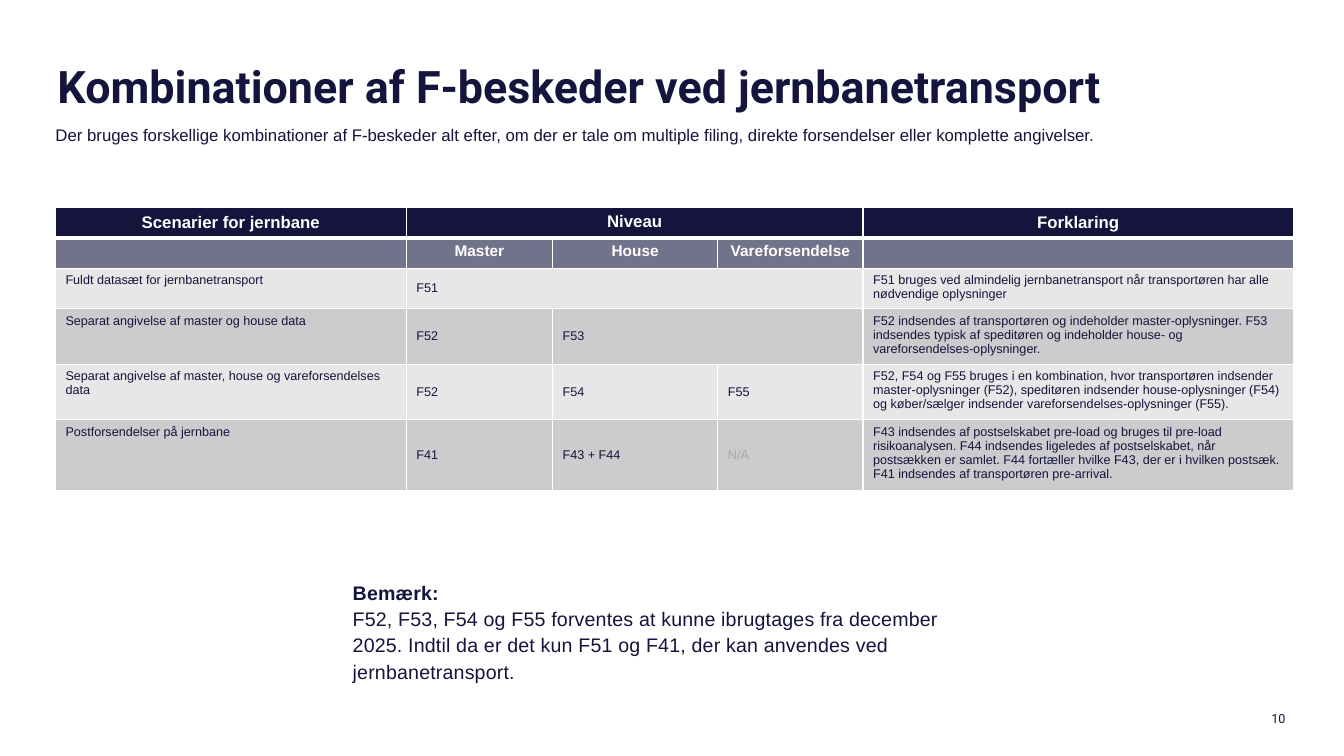
from pptx import Presentation
from pptx.util import Inches, Pt
from pptx.dml.color import RGBColor
from pptx.enum.text import PP_ALIGN, MSO_ANCHOR
from pptx.oxml import parse_xml
from pptx.oxml.ns import nsdecls
from lxml.etree import SubElement

NAVY = RGBColor(0x14, 0x14, 0x3C)
SLATE = RGBColor(0x72, 0x72, 0x8A)
LIGHT = RGBColor(0xE7, 0xE7, 0xE8)
GREY = RGBColor(0xCC, 0xCC, 0xCE)
MUTED = RGBColor(0xA6, 0xA6, 0xA6)
WHITE = RGBColor(0xFF, 0xFF, 0xFF)


def style(p, size, color=NAVY, bold=False, name="Arial", align=PP_ALIGN.LEFT):
    p.alignment = align
    p.font.size = Pt(size)
    p.font.bold = bold
    p.font.name = name
    p.font.color.rgb = color


def add_text(s, text, left, top, width, height, inset=0):
    tf = s.shapes.add_textbox(Inches(left), Inches(top), Inches(width), Inches(height)).text_frame
    tf.word_wrap = True
    tf.margin_left = tf.margin_right = Inches(inset)
    tf.margin_top = tf.margin_bottom = Inches(inset / 2)
    tf.text = text
    return tf


prs = Presentation()
prs.slide_width, prs.slide_height = Inches(13.33), Inches(7.5)
s = prs.slides.add_slide(prs.slide_layouts[6])

# Title and introduction
tf = add_text(s, "Kombinationer af F-beskeder ved jernbanetransport", 0.57, 0.65, 12.2, 0.57)
style(tf.paragraphs[0], 32, bold=True, name="Roboto")
tf.paragraphs[0].line_spacing = 0.89
tf = add_text(s, "Der bruges forskellige kombinationer af F-beskeder alt efter, om der er tale om "
              "multiple filing, direkte forsendelser eller komplette angivelser.", 0.55, 1.22, 11.05, 0.43)
style(tf.paragraphs[0], 12)
tf.paragraphs[0].line_spacing = 1.11

# Scenario table
rows = [
    ("Scenarier for jernbane", "Niveau", "", "", "Forklaring"),
    ("", "Master", "House", "Vareforsendelse", ""),
    ("Fuldt datasæt for jernbanetransport", "F51", "", "",
     "F51 bruges ved almindelig jernbanetransport når transportøren har alle nødvendige oplysninger"),
    ("Separat angivelse af master og house data", "F52", "F53", "",
     "F52 indsendes af transportøren og indeholder master-oplysninger. F53 indsendes typisk af "
     "speditøren og indeholder house- og vareforsendelses-oplysninger."),
    ("Separat angivelse af master, house og vareforsendelses data", "F52", "F54", "F55",
     "F52, F54 og F55 bruges i en kombination, hvor transportøren indsender master-oplysninger "
     "(F52), speditøren indsender house-oplysninger (F54) og køber/sælger indsender "
     "vareforsendelses-oplysninger (F55)."),
    ("Postforsendelser på jernbane", "F41", "F43 + F44", "N/A",
     "F43 indsendes af postselskabet pre-load og bruges til pre-load risikoanalysen. F44 indsendes "
     "ligeledes af postselskabet, når postsækken er samlet. F44 fortæller hvilke F43, der er i "
     "hvilken postsæk. F41 indsendes af transportøren pre-arrival."),
]
widths = [3.48, 1.45, 1.64, 1.44, 4.27]
heights = [0.3, 0.3, 0.4, 0.55, 0.55, 0.7]
fills = [NAVY, SLATE, LIGHT, GREY, LIGHT, GREY]
table = s.shapes.add_table(len(rows), len(widths), Inches(0.55), Inches(2.06),
                           Inches(sum(widths)), Inches(sum(heights))).table
for column, width in zip(table.columns, widths):
    column.width = Inches(width)
for row, height in zip(table.rows, heights):
    row.height = Inches(height)

for i, texts in enumerate(rows):
    for j, text in enumerate(texts):
        cell = table.cell(i, j)
        p = cell.text_frame.paragraphs[0]
        if text:
            p.text = text
        else:
            SubElement(p._p, "{http://schemas.openxmlformats.org/drawingml/2006/main}endParaRPr", sz="900")
        if i < 2:
            style(p, 12 if i == 0 else 11, WHITE, True, align=PP_ALIGN.CENTER)
        else:
            style(p, 9, MUTED if text == "N/A" else NAVY)
        middle = j in (0, 4) if i == 0 else i > 1 and 0 < j < 4
        cell.vertical_anchor = MSO_ANCHOR.MIDDLE if middle else MSO_ANCHOR.TOP
        for side in "LRTB":
            points = 3 if (i, side) in ((0, "B"), (1, "T")) else 1
            cell._tc.get_or_add_tcPr().append(parse_xml(
                f'<a:ln{side} {nsdecls("a")} w="{Pt(points)}"><a:solidFill>'
                f'<a:srgbClr val="{WHITE}"/></a:solidFill></a:ln{side}>'))
        cell.fill.solid()
        cell.fill.fore_color.rgb = fills[i]

for i, first in ((0, 1), (2, 1), (3, 2)):
    table.cell(i, first).merge(table.cell(i, 3))

# Note
tf = add_text(s, "Bemærk:\nF52, F53, F54 og F55 forventes at kunne ibrugtages fra december 2025. "
              "Indtil da er det kun F51 og F41, der kan anvendes ved jernbanetransport.",
              3.4, 5.69, 6.54, 1.11, inset=0.1)
for p, bold in zip(tf.paragraphs, (True, False)):
    style(p, 14, bold=bold)
    p.line_spacing = 1.11
    p.runs[0]._r.get_or_add_rPr().set("spc", "10")

# Page number
tf = add_text(s, "10", 11.05, 7.02, 1.7, 0.18)
tf.vertical_anchor = MSO_ANCHOR.BOTTOM
style(tf.paragraphs[0], 9, name="Roboto", align=PP_ALIGN.RIGHT)

prs.save("out.pptx")
